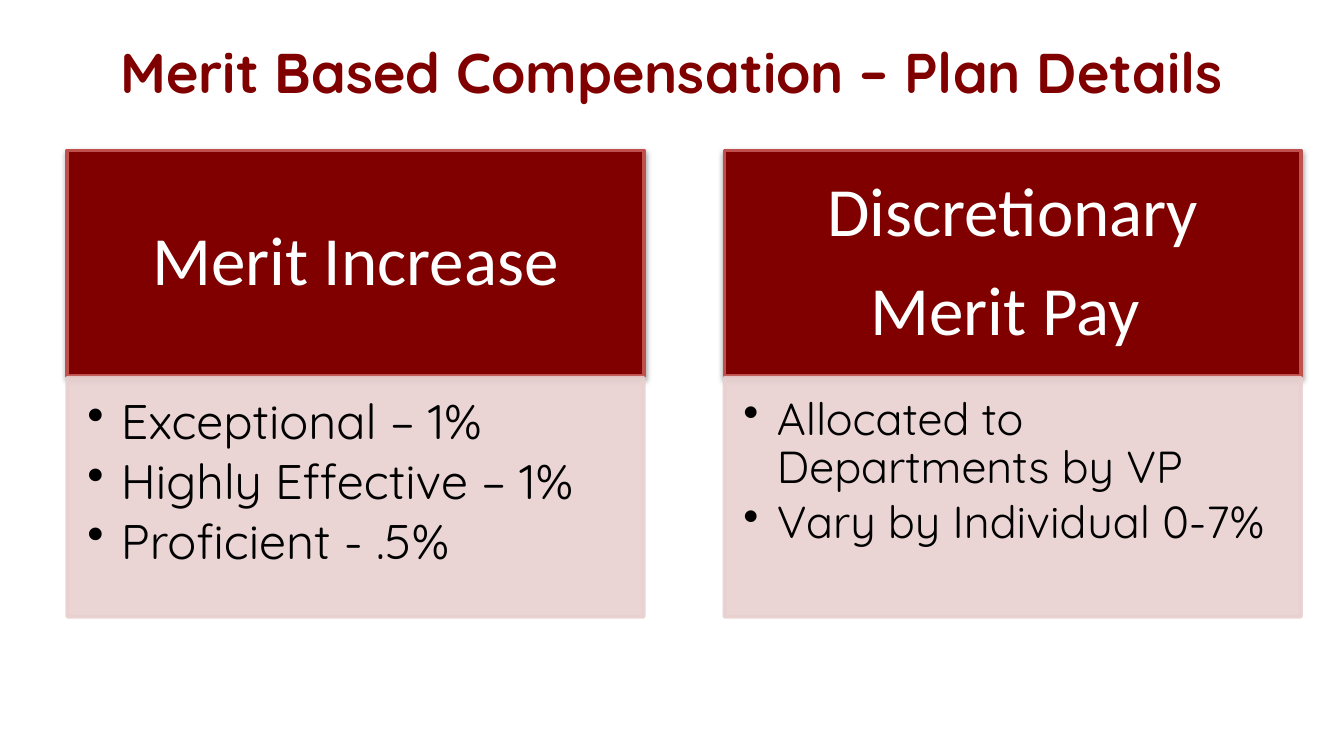
import pptx
import pptx.dml.color
import pptx.enum.shapes
import pptx.enum.text
import pptx.oxml
import pptx.oxml.ns
import pptx.util
from lxml import etree

Inches, Pt = pptx.util.Inches, pptx.util.Pt
ALIGN, ANCHOR = pptx.enum.text.PP_ALIGN, pptx.enum.text.MSO_ANCHOR
NAMESPACE = pptx.oxml.ns.nsdecls("a")

# Content
TITLE = "Merit Based Compensation – Plan Details"
CARDS = [
    {"heading": ["Merit Increase"],
     "bullets": ["Exceptional – 1%", "Highly Effective – 1%", "Proficient - .5%"],
     "size": 26, "margins": (0.15, 0.15, 0.2, 0.23)},
    {"heading": ["Discretionary", "Merit Pay "],
     "bullets": ["Allocated to Departments by VP", "Vary by Individual 0-7%"],
     "size": 24, "margins": (0.14, 0.14, 0.19, 0.21)},
]

# Layout and colours
SLIDE_WIDTH = 10
SLIDE_HEIGHT = SLIDE_WIDTH * 9 / 16
LEFT, TOP, CARD_WIDTH, CARD_STEP = 0.5, 1.12, 4.29, 4.89
HEADING_HEIGHT, BODY_TOP, BODY_HEIGHT = 1.68, 2.81, 1.78
MAROON, RED, PINK, WHITE, BLACK = "800000", "C0504D", "E8D0D0", "FFFFFF", "000000"


def color(value):
    return pptx.dml.color.RGBColor.from_string(value)


def write(shape, lines, font, size, text_color, margins, anchor, alignment,
          spacing=1.0, after=0, bold=False, bullets=False):
    frame = shape.text_frame
    frame.word_wrap = True
    frame.vertical_anchor = anchor
    (frame.margin_left, frame.margin_top,
     frame.margin_right, frame.margin_bottom) = map(Inches, margins)
    frame.text = "\n".join(lines)
    for paragraph in frame.paragraphs:
        if bullets:
            properties = paragraph._p.get_or_add_pPr()
            properties.set("lvl", "1")
            properties.set("marL", str(Inches(0.25)))
            properties.set("indent", str(-Inches(0.25)))
            etree.SubElement(properties, pptx.oxml.ns.qn("a:buChar")).set("char", "••")
        paragraph.alignment = alignment
        paragraph.line_spacing = spacing
        paragraph.space_after = Pt(after)
        paragraph.font.name = font
        paragraph.font.size = Pt(size)
        paragraph.font.bold = bold
        paragraph.font.color.rgb = color(text_color)


def add_box(left, top, height, fill, line):
    shape = slide.shapes.add_shape(
        pptx.enum.shapes.MSO_SHAPE.RECTANGLE,
        Inches(left), Inches(top), Inches(CARD_WIDTH), Inches(height))
    shape.shadow.inherit = False
    shape.fill.solid()
    shape.fill.fore_color.rgb = color(fill)
    shape.line.color.rgb = color(line)
    shape.line.width = Pt(2)
    return shape


def add_shadow(shape):
    effects = shape._element.spPr.find(pptx.oxml.ns.qn("a:effectLst"))
    effects.append(pptx.oxml.parse_xml(
        f'<a:outerShdw {NAMESPACE} blurRad="{Pt(3.1)}" dist="{Pt(1.6)}" '
        f'dir="5400000" rotWithShape="0"><a:srgbClr val="{BLACK}">'
        '<a:alpha val="38000"/></a:srgbClr></a:outerShdw>'))


def make_translucent(shape, percent):
    for element in shape._element.spPr.iter(pptx.oxml.ns.qn("a:srgbClr")):
        etree.SubElement(element, pptx.oxml.ns.qn("a:alpha")).set("val", str(percent * 1000))


presentation = pptx.Presentation()
presentation.slide_width = Inches(SLIDE_WIDTH)
presentation.slide_height = Inches(SLIDE_HEIGHT)
slide = presentation.slides.add_slide(presentation.slide_layouts[6])

# Title
title = slide.shapes.add_textbox(Inches(0.5), Inches(0.23), Inches(9), Inches(0.94))
write(title, [TITLE], "Quicksand", 30, MAROON, (0.1, 0.05, 0.1, 0.05),
      ANCHOR.TOP, ALIGN.CENTER, bold=True)

# Cards: a heading above a list
for index, card in enumerate(CARDS):
    left = LEFT + index * CARD_STEP
    heading = add_box(left, TOP, HEADING_HEIGHT, MAROON, RED)
    add_shadow(heading)
    write(heading, card["heading"], "Calibri", 37, WHITE, (0.29, 0.16, 0.29, 0.16),
          ANCHOR.MIDDLE, ALIGN.CENTER, spacing=0.9, after=13)

    body = add_box(left, BODY_TOP, BODY_HEIGHT, PINK, PINK)
    make_translucent(body, 90)
    write(body, card["bullets"], "Quicksand", card["size"], BLACK, card["margins"],
          ANCHOR.TOP, ALIGN.LEFT, spacing=0.9, after=0.15 * card["size"], bullets=True)

presentation.save("out.pptx")
